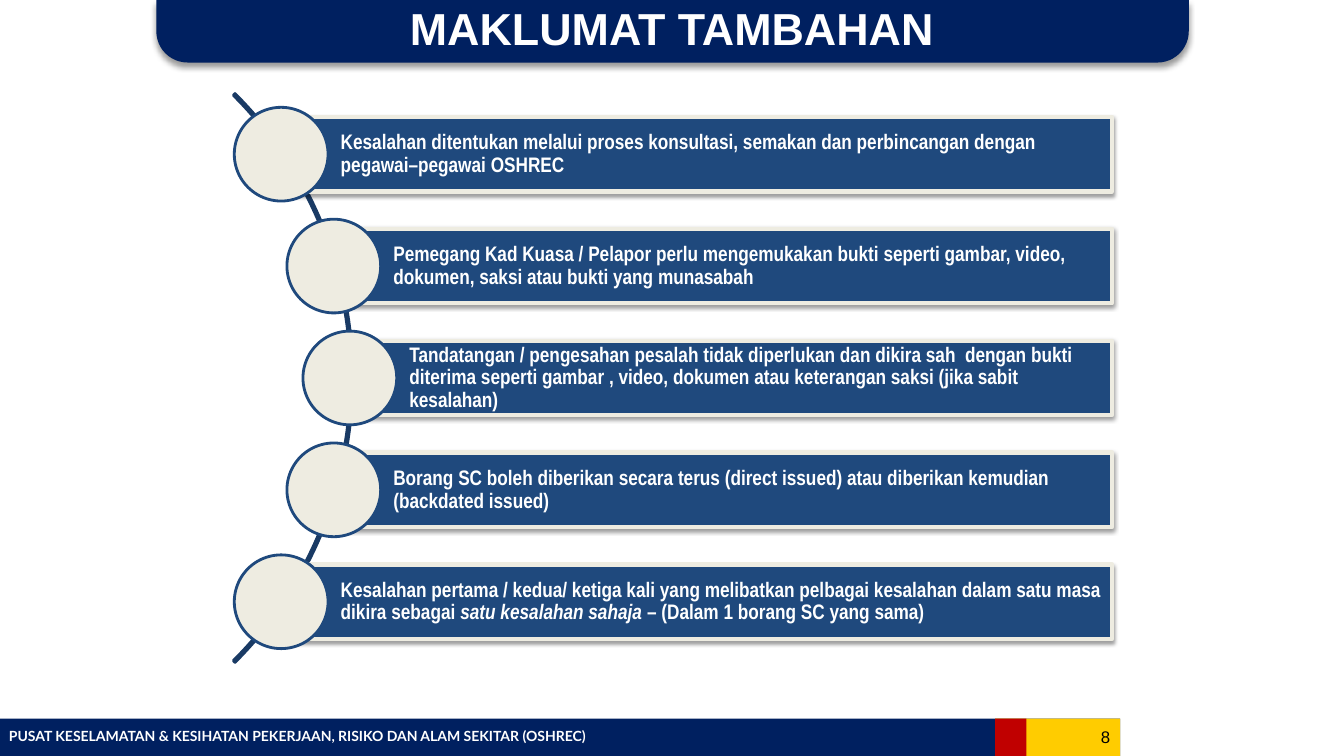
import math

import pptx
import pptx.dml.color
import pptx.enum.shapes
import pptx.enum.text
import pptx.util
from lxml import etree
from pptx.util import Inches

COLORS = {
    "navy": "002060", "blue": "1F497D", "arc": "193A64", "cream": "EEECE1",
    "yellow": "FFCC00", "red": "C00000", "white": "FFFFFF", "black": "000000",
}
SHAPE = pptx.enum.shapes.MSO_SHAPE
ALIGN = pptx.enum.text.PP_ALIGN
ANCHOR = pptx.enum.text.MSO_ANCHOR
NS = "http://schemas.openxmlformats.org/drawingml/2006/main"
NOTES = [
    ["Kesalahan ditentukan melalui proses konsultasi, semakan dan perbincangan "
     "dengan pegawai–pegawai OSHREC"],
    ["Pemegang Kad Kuasa / Pelapor perlu mengemukakan bukti seperti gambar, video, "
     "dokumen, saksi atau bukti yang munasabah"],
    ["Tandatangan / pengesahan pesalah tidak diperlukan dan dikira sah  dengan bukti "
     "diterima seperti gambar , video, dokumen atau keterangan saksi (jika sabit kesalahan)"],
    ["Borang SC boleh diberikan secara terus (direct issued) atau diberikan kemudian "
     "(backdated issued)"],
    ["Kesalahan pertama / kedua/ ketiga kali yang melibatkan pelbagai kesalahan dalam "
     "satu masa dikira sebagai ", "satu kesalahan sahaja ",
     "– (Dalam 1 borang SC yang sama)"],
]


def rgb(name):
    """Return the named colour."""
    return pptx.dml.color.RGBColor.from_string(COLORS[name])


def add_shadow(sp, alpha, blur, dist):
    """Give a shape a soft black shadow straight below it."""
    effects = sp._element.spPr.find(f"{{{NS}}}effectLst")
    shadow = etree.SubElement(
        effects, f"{{{NS}}}outerShdw", blurRad=str(pptx.util.Pt(blur)),
        dist=str(pptx.util.Pt(dist)), dir="5400000", algn="ctr", rotWithShape="0")
    color = etree.SubElement(shadow, f"{{{NS}}}srgbClr", val=COLORS["black"])
    etree.SubElement(color, f"{{{NS}}}alpha", val=str(alpha * 1000))


def add_box(s, kind, left, top, width, height, fill=None, line=None, weight=2, adj=()):
    """Add a preset shape with the given fill, outline and adjustments."""
    sp = s.shapes.add_shape(kind, Inches(left), Inches(top), Inches(width), Inches(height))
    sp.shadow.inherit = False
    for i, value in enumerate(adj):
        sp.adjustments[i] = value
    if fill:
        sp.fill.solid()
        sp.fill.fore_color.rgb = rgb(fill)
    else:
        sp.fill.background()
    if line:
        sp.line.color.rgb = rgb(line)
        sp.line.width = pptx.util.Pt(weight)
    else:
        sp.line.fill.background()
    return sp


def set_text(sp, runs, size, font="Arial", color="white", bold=True, align=ALIGN.LEFT,
             anchor=ANCHOR.MIDDLE, spacing=None, insets=(0.1, 0.05, 0.1, 0.05)):
    """Write one paragraph of runs, every second run in italics."""
    tf = sp.text_frame
    tf.word_wrap = True
    tf.auto_size = pptx.enum.text.MSO_AUTO_SIZE.NONE
    tf.vertical_anchor = anchor
    tf.margin_left, tf.margin_top, tf.margin_right, tf.margin_bottom = map(Inches, insets)
    p = tf.paragraphs[0]
    p.alignment = align
    p.line_spacing = spacing
    for i, text in enumerate(runs):
        r = p.add_run()
        r.text = text
        r.font.name = font
        r.font.size = pptx.util.Pt(size)
        r.font.bold = bold
        r.font.italic = i % 2 == 1
        r.font.color.rgb = rgb(color)


def add_header(s, left, top, width, height):
    """Draw the title band and place the title on it."""
    band = add_box(s, SHAPE.ROUND_2_SAME_RECTANGLE, left, top, width, height,
                   "navy", adj=(0.5, 0))
    band.rotation = 180
    add_shadow(band, 40, 4, 3)
    title = s.shapes.title
    title.left, title.top = Inches(left + 0.31), Inches(top + 0.05)
    title.width, title.height = Inches(width - 0.63), Inches(0.45)
    set_text(title, ["MAKLUMAT TAMBAHAN"], 32, align=ALIGN.CENTER)
    band._element.addnext(title._element)


def add_footer(s, left, top, width, height):
    """Draw the footer bar with the unit name and page number."""
    right = left + width
    add_box(s, SHAPE.RECTANGLE, left, top, width, height, "navy")
    add_box(s, SHAPE.RECTANGLE, right - 1.24, top, 1.24, height, "yellow")
    add_box(s, SHAPE.RECTANGLE, right - 1.24, top, 0.31, height, "red")
    unit = s.shapes.add_textbox(Inches(left - 0.01), Inches(top + 0.04),
                                Inches(9.29), Inches(0.27))
    set_text(unit, ["PUSAT KESELAMATAN & KESIHATAN PEKERJAAN, RISIKO DAN ALAM SEKITAR (OSHREC)"],
             10, font="Lato", anchor=ANCHOR.TOP)
    number = s.shapes.add_textbox(Inches(right - 1.13), Inches(top),
                                  Inches(1.13), Inches(0.35))
    set_text(number, ["8"], 12, color="black", bold=False, align=ALIGN.RIGHT)


def add_curved_list(s, arc_x, middle, right, pitch):
    """Place bars and circles along an arc centred at arc_x and middle."""
    radius, bar_height, dot = 3.99, 0.74, 0.93
    add_box(s, SHAPE.BLOCK_ARC, arc_x - radius, middle - radius, 2 * radius, 2 * radius,
            line="arc", adj=(189, 27, 0.003))
    for i, runs in enumerate(NOTES):
        dy = (i - (len(NOTES) - 1) / 2) * pitch
        x = arc_x + math.sqrt((radius - 0.03) ** 2 - dy ** 2)
        y = middle + dy
        bar = add_box(s, SHAPE.RECTANGLE, x, y - bar_height / 2, right - x, bar_height,
                      "blue", "cream", 3)
        add_shadow(bar, 38, 3.1, 1.6)
        set_text(bar, runs, 15, font="Arial Narrow", spacing=0.9,
                 insets=(0.59, 0.04, 0.04, 0.04))
        add_box(s, SHAPE.OVAL, x - dot / 2, y - dot / 2, dot, dot, "cream", "blue")


def main():
    """Build and save the slide."""
    prs = pptx.Presentation()
    prs.slide_width, prs.slide_height = Inches(13.33), Inches(7.5)
    s = prs.slides.add_slide(prs.slide_layouts[5])
    add_header(s, 1.55, 0, 10.24, 0.62)
    add_footer(s, 0, 7.13, 11.11, 0.37)
    add_curved_list(s, -0.49, 3.75, 11.03, 1.11)
    prs.save("out.pptx")


if __name__ == "__main__":
    main()
